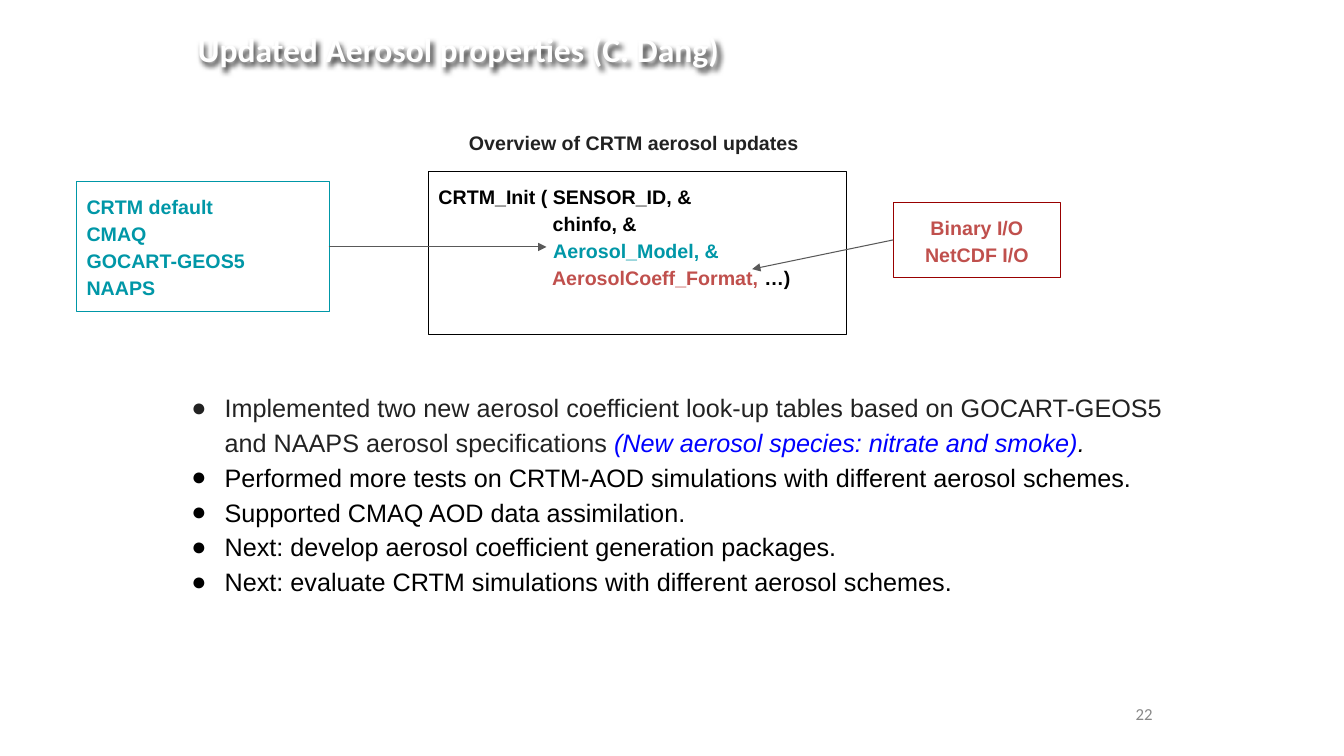
from dataclasses import dataclass

from lxml import etree
from pptx import Presentation
from pptx.dml.color import RGBColor
from pptx.enum.shapes import MSO_CONNECTOR, MSO_SHAPE
from pptx.enum.text import MSO_ANCHOR, PP_ALIGN
from pptx.oxml.ns import qn
from pptx.util import Inches, Pt

LEFT, CENTER, RIGHT = PP_ALIGN.LEFT, PP_ALIGN.CENTER, PP_ALIGN.RIGHT
TOP, MIDDLE = MSO_ANCHOR.TOP, MSO_ANCHOR.MIDDLE
RECTANGLE = MSO_SHAPE.RECTANGLE
STRAIGHT = MSO_CONNECTOR.STRAIGHT


@dataclass(frozen=True)
class Theme:
    black: str = "000000"
    white: str = "FFFFFF"
    ink: str = "222222"
    teal: str = "0097A7"
    red: str = "C0504D"
    dark_red: str = "980000"
    blue: str = "0000FF"
    arrow: str = "595959"
    number: str = "888888"
    body_font: str = "Arial"
    title_font: str = "Calibri"
    title_size: int = 24
    body_size: int = 18
    label_size: int = 14
    number_size: int = 12
    line_width: float = 0.75
    line_spacing: float = 1.15


THEME = Theme()
CODE_INDENT = " " * 21


@dataclass(frozen=True)
class Style:
    size: int
    color: str
    font: str = THEME.body_font
    bold: bool = False
    italic: bool = False


def label(color):
    return Style(THEME.label_size, color, bold=True)


def body(color, italic=False):
    return Style(THEME.body_size, color, italic=italic)


def add_bullet(paragraph, color):
    properties = paragraph._p.get_or_add_pPr()
    properties.set("marL", str(Inches(0.5)))
    properties.set("indent", str(Inches(-0.33)))
    bullet_color = etree.SubElement(properties, qn("a:buClr"))
    etree.SubElement(bullet_color, qn("a:srgbClr"), val=color)
    etree.SubElement(properties, qn("a:buFont"), typeface=THEME.body_font)
    etree.SubElement(properties, qn("a:buChar"), char="●")


def write(shape, paragraphs, align=LEFT, anchor=TOP, inset=(0.1, 0.1),
          spacing=THEME.line_spacing, bulleted=False):
    """Fill a shape with paragraphs, each a list of (text, style) runs."""
    frame = shape.text_frame
    frame.word_wrap = True
    frame.vertical_anchor = anchor
    frame.margin_left = frame.margin_right = Inches(inset[0])
    frame.margin_top = frame.margin_bottom = Inches(inset[1])
    for index, runs in enumerate(paragraphs):
        paragraph = frame.add_paragraph() if index else frame.paragraphs[0]
        if bulleted:
            add_bullet(paragraph, runs[0][1].color)
        paragraph.alignment = align
        paragraph.line_spacing = spacing
        for text, style in runs:
            run = paragraph.add_run()
            run.text = text
            run.font.name = style.font
            run.font.size = Pt(style.size)
            run.font.bold = style.bold
            run.font.italic = style.italic
            run.font.color.rgb = RGBColor.from_string(style.color)


def add_text(slide, bounds, paragraphs, **layout):
    box = slide.shapes.add_textbox(*map(Inches, bounds))
    write(box, paragraphs, **layout)
    return box


def add_box(slide, bounds, outline, paragraphs, **layout):
    box = slide.shapes.add_shape(RECTANGLE, *map(Inches, bounds))
    box.shadow.inherit = False
    box.fill.background()
    box.line.color.rgb = RGBColor.from_string(outline)
    box.line.width = Pt(THEME.line_width)
    write(box, paragraphs, **layout)


def add_arrow(slide, start, end):
    arrow = slide.shapes.add_connector(STRAIGHT, *map(Inches, start + end))
    arrow.line.color.rgb = RGBColor.from_string(THEME.arrow)
    arrow.line.width = Pt(THEME.line_width)
    etree.SubElement(arrow.line._get_or_add_ln(), qn("a:tailEnd"), type="triangle")
    etree.SubElement(arrow._element.spPr, qn("a:effectLst"))


def add_soft_shadow(shape):
    effects = etree.SubElement(shape._element.spPr, qn("a:effectLst"))
    shadow = etree.SubElement(
        effects, qn("a:outerShdw"), blurRad=str(Pt(4)), dist=str(Pt(3)),
        dir="2700000", algn="tl", rotWithShape="0")
    color = etree.SubElement(shadow, qn("a:srgbClr"), val=THEME.black)
    etree.SubElement(color, qn("a:alpha"), val="80000")


def add_summary(slide):
    black = body(THEME.black)
    points = [[
        ("Implemented two new aerosol coefficient look-up tables based on "
         "GOCART-GEOS5 and NAAPS aerosol specifications ", body(THEME.ink)),
        ("(New aerosol species: nitrate and smoke)", body(THEME.blue, italic=True)),
        (".", body(THEME.black, italic=True)),
    ]]
    points += [[(text, black)] for text in (
        "Performed more tests on CRTM-AOD simulations with different aerosol schemes.",
        "Supported CMAQ AOD data assimilation.",
        "Next: develop aerosol coefficient generation packages.",
        "Next: evaluate CRTM simulations with different aerosol schemes.",
    )]
    add_text(slide, (1.63, 3.75, 10.04, 2.43), points, bulleted=True)


def add_diagram(slide):
    black, teal, red = label(THEME.black), label(THEME.teal), label(THEME.red)
    add_box(slide, (4.25, 1.7, 4.15, 1.62), THEME.black, [
        [("CRTM_Init ( SENSOR_ID, &", black)],
        [(CODE_INDENT + "chinfo, &", black)],
        [(CODE_INDENT, red), ("Aerosol_Model, &", teal)],
        [(CODE_INDENT + "AerosolCoeff_Format, ", red), ("…)", black)],
    ])
    formats = ("Binary I/O", "NetCDF I/O")
    add_box(slide, (8.86, 2.01, 1.66, 0.74), THEME.dark_red,
            [[(name, red)] for name in formats], align=CENTER)
    schemes = ("CRTM default", "CMAQ", "GOCART-GEOS5", "NAAPS")
    add_box(slide, (0.76, 1.8, 2.51, 1.29), THEME.teal,
            [[(name, teal)] for name in schemes])
    add_arrow(slide, (3.26, 2.45), (5.42, 2.45))
    add_arrow(slide, (8.86, 2.38), (7.46, 2.67))
    add_text(slide, (4.23, 1.16, 4.17, 0.75),
             [[("Overview of CRTM aerosol updates ", label(THEME.ink))]], align=CENTER)


def add_title(slide):
    style = Style(THEME.title_size, THEME.white, THEME.title_font, bold=True)
    title = add_text(slide, (1.89, 0.05, 8.46, 0.88),
                     [[("Updated Aerosol properties (C. Dang)", style)]],
                     anchor=MIDDLE, inset=(0.07, 0.04), spacing=1.0)
    add_soft_shadow(title)


def add_page_number(slide):
    style = Style(THEME.number_size, THEME.number, THEME.title_font)
    add_text(slide, (10.93, 6.8, 0.6, 0.57), [[("22", style)]],
             align=RIGHT, anchor=MIDDLE, spacing=1.0)


def main():
    deck = Presentation()
    deck.slide_width, deck.slide_height = Inches(13.33), Inches(7.5)
    slide = deck.slides.add_slide(deck.slide_layouts[6])
    add_summary(slide)
    add_diagram(slide)
    add_title(slide)
    add_page_number(slide)
    deck.save("out.pptx")


if __name__ == "__main__":
    main()
